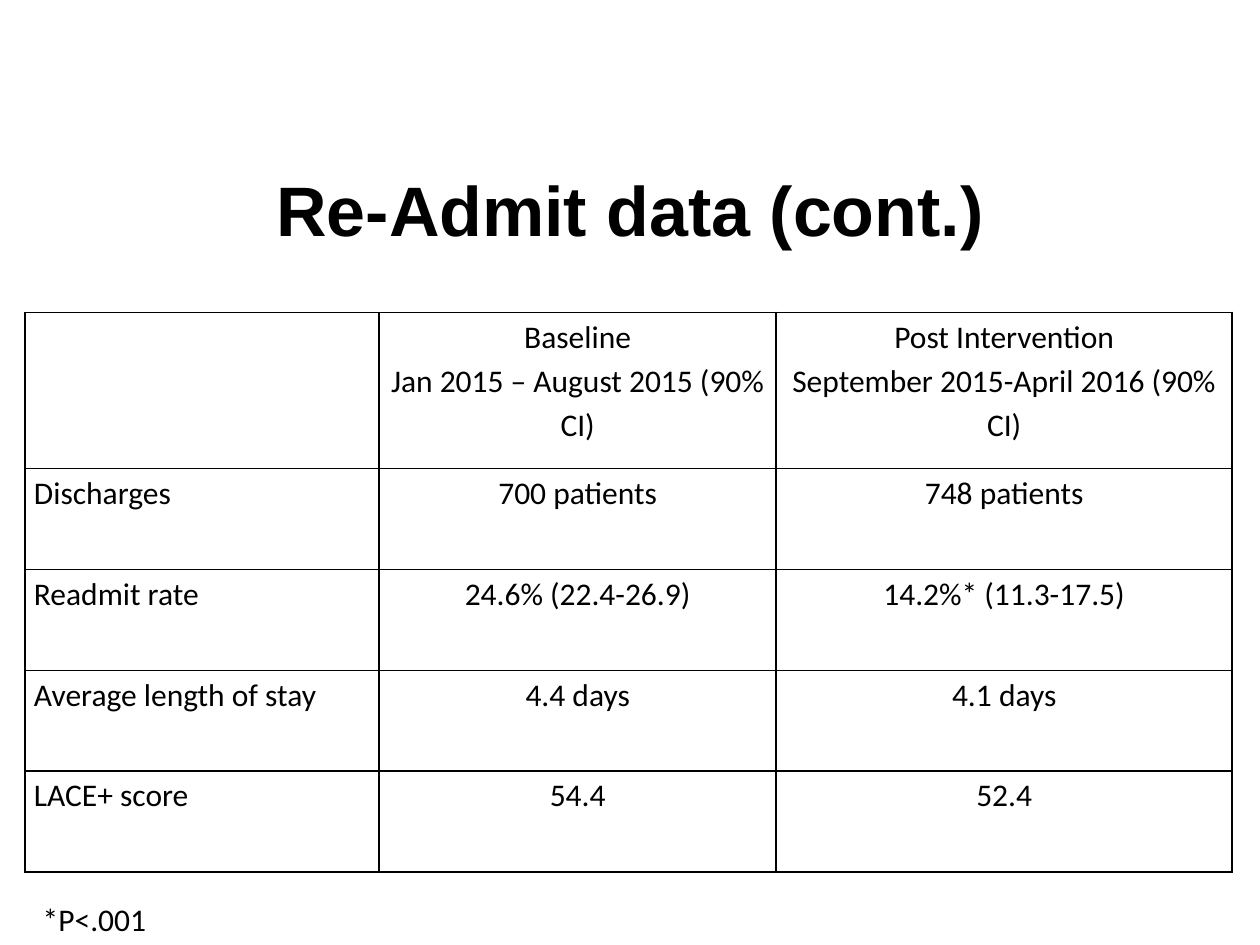
from pptx import Presentation
from pptx.dml.color import RGBColor
from pptx.enum.text import MSO_ANCHOR, PP_ALIGN
from pptx.oxml import parse_xml
from pptx.oxml.ns import nsdecls
from pptx.util import Inches, Pt


def style(par, name, size, bold=False):
    for run in par.runs:
        run.font.name = name
        run.font.size = Pt(size)
        run.font.bold = bold
        run.font.color.rgb = RGBColor.from_string("000000")


def border(cell):
    props = cell._tc.get_or_add_tcPr()
    for i, side in enumerate(("lnL", "lnR", "lnT", "lnB")):
        props.insert(i, parse_xml(
            f'<a:{side} {nsdecls("a")} w="12700"><a:solidFill>'
            f'<a:srgbClr val="000000"/></a:solidFill></a:{side}>'))


deck = Presentation()
deck.slide_width = Inches(10)
deck.slide_height = Inches(7.5)
slide = deck.slides.add_slide(deck.slide_layouts[5])

title = slide.shapes.title
title.left, title.top = Inches(0.5), Inches(1.03)
title.width, title.height = Inches(9), Inches(1.25)
title.text_frame.text = "Re-Admit data (cont.)"
title.text_frame.vertical_anchor = MSO_ANCHOR.MIDDLE
title.text_frame.paragraphs[0].alignment = PP_ALIGN.CENTER
style(title.text_frame.paragraphs[0], "Arial", 40, True)

rows = [
    ("", "Baseline\nJan 2015 – August 2015 (90% CI)",
     "Post Intervention\nSeptember 2015-April 2016 (90% CI)"),
    ("Discharges", "700 patients", "748 patients"),
    ("Readmit rate", "24.6% (22.4-26.9)", "14.2%* (11.3-17.5)"),
    ("Average length of stay", "4.4 days", "4.1 days"),
    ("LACE+ score", "54.4", "52.4"),
]
widths = [2.81, 3.15, 3.62]
heights = [1.24] + [0.8] * 4
table = slide.shapes.add_table(
    len(rows), len(widths), Inches(0.2), Inches(2.48),
    Inches(sum(widths)), Inches(sum(heights))).table
for col, width in zip(table.columns, widths):
    col.width = Inches(width)
for row, height in zip(table.rows, heights):
    row.height = Inches(height)

for r, row in enumerate(rows):
    for c, text in enumerate(row):
        cell = table.cell(r, c)
        cell.margin_left = cell.margin_right = Inches(0.07)
        cell.margin_top = cell.margin_bottom = Inches(0)
        cell.fill.solid()
        cell.fill.fore_color.rgb = RGBColor.from_string("FFFFFF")
        border(cell)
        cell.text_frame.text = text
        for par in cell.text_frame.paragraphs:
            par.alignment = PP_ALIGN.CENTER if c else PP_ALIGN.LEFT
            par.line_spacing = 1.15
            style(par, "Calibri", 18)

note = slide.shapes.add_textbox(
    Inches(0.24), Inches(7.09), Inches(3.08), Inches(0.41))
note.text_frame.word_wrap = True
note.text_frame.text = "*P<.001"
style(note.text_frame.paragraphs[0], "Calibri", 18)

deck.save("out.pptx")
